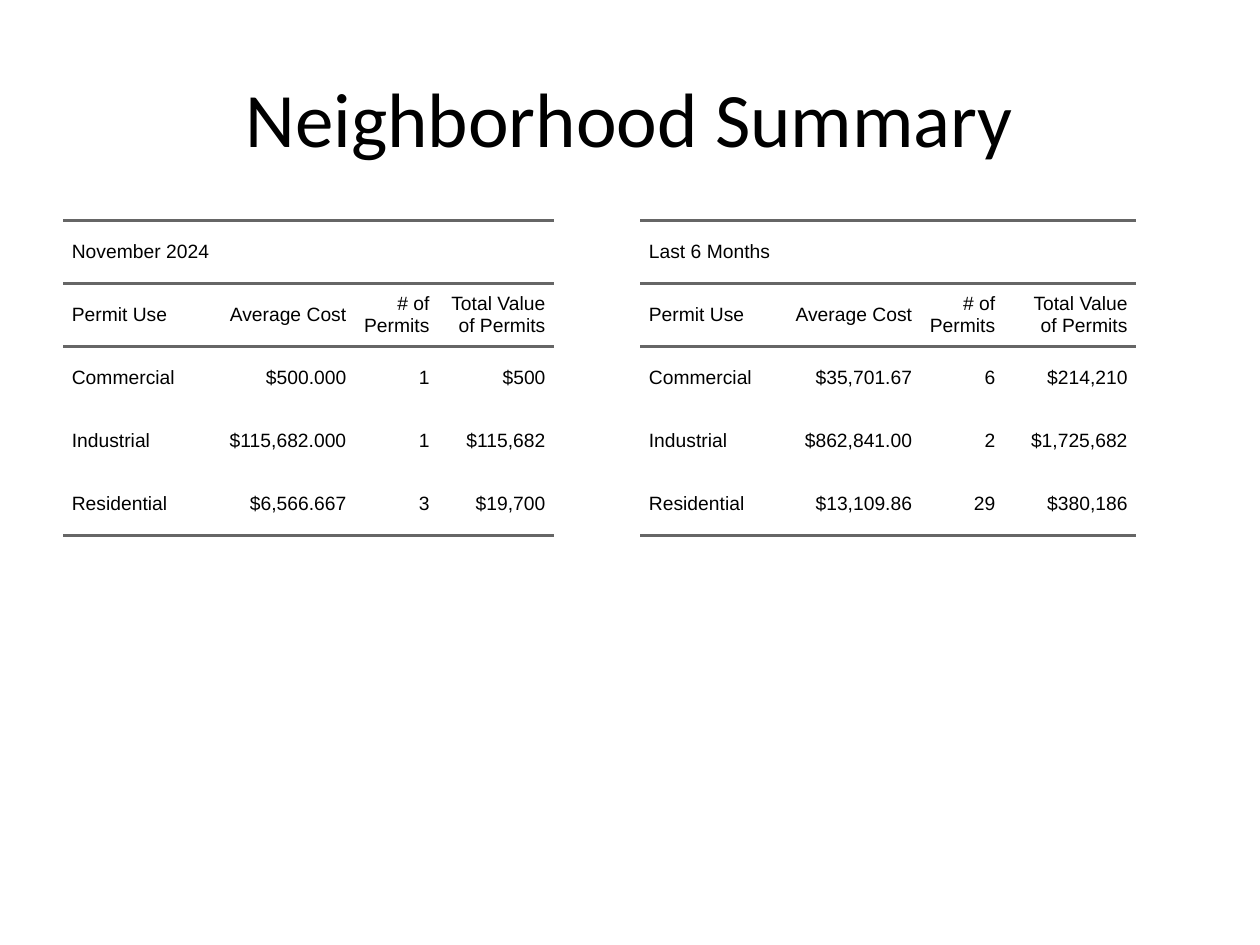
from lxml import etree
from pptx import Presentation
from pptx.dml.color import RGBColor
from pptx.enum import text
from pptx.oxml.ns import qn
from pptx.util import Inches, Pt

COLORS = {"ink": "000000", "rule": "666666"}
HEADER = ["Permit Use", "Average Cost", "# of Permits", "Total Value of Permits"]
RULED_EDGES = {0, 1, 2, 5}  # edge n lies above row n
PAD = Inches(0.07)
ROW_HEIGHT = Inches(0.5)

NOVEMBER = [
    ["Commercial", "$500.000", "1", "$500"],
    ["Industrial", "$115,682.000", "1", "$115,682"],
    ["Residential", "$6,566.667", "3", "$19,700"],
]
SIX_MONTHS = [
    ["Commercial", "$35,701.67", "6", "$214,210"],
    ["Industrial", "$862,841.00", "2", "$1,725,682"],
    ["Residential", "$13,109.86", "29", "$380,186"],
]


class SlideBuilder:
    def __init__(self, slide):
        self.slide = slide

    def style(self, p, font, size, align):
        p.alignment = align
        p.font.name = font
        p.font.size = Pt(size)
        p.font.color.rgb = RGBColor.from_string(COLORS["ink"])

    def title(self, words):
        sp = self.slide.shapes.add_textbox(Inches(0.5), Inches(0.3), Inches(9), Inches(1.25))
        tf = sp.text_frame
        tf.word_wrap = True
        tf.vertical_anchor = text.MSO_ANCHOR.MIDDLE
        tf.text = words
        self.style(tf.paragraphs[0], "Calibri", 44, text.PP_ALIGN.CENTER)

    def borders(self, cell, row):
        """Rule the cell's top and bottom where the row meets a ruled edge."""
        tcPr = cell._tc.get_or_add_tcPr()
        ruled = {"L": False, "R": False, "T": row in RULED_EDGES, "B": row + 1 in RULED_EDGES}
        for side, visible in ruled.items():
            ln = etree.SubElement(tcPr, qn(f"a:ln{side}"), w=str(Pt(1.5)))
            if visible:
                fill = etree.SubElement(ln, qn("a:solidFill"))
                etree.SubElement(fill, qn("a:srgbClr"), val=COLORS["rule"])
            else:
                etree.SubElement(ln, qn("a:noFill"))

    def cell(self, cell, words, row, align):
        self.borders(cell, row)
        cell.fill.background()
        cell.vertical_anchor = text.MSO_ANCHOR.MIDDLE
        cell.margin_left = cell.margin_right = 0
        cell.margin_top = cell.margin_bottom = PAD
        cell.text = words
        p = cell.text_frame.paragraphs[0]
        self.style(p, "Arial", 11, align)
        p.space_before = p.space_after = Pt(5)
        pPr = p._p.get_or_add_pPr()
        pPr.set("marL", str(PAD))
        pPr.set("marR", str(PAD))
        pPr.set("indent", "0")

    def permit_table(self, left, widths, period, permits):
        rows = [[period, "", "", ""], HEADER, *permits]
        width, height = Inches(4.42), Inches(4.95)
        frame = self.slide.shapes.add_table(
            len(rows), len(HEADER), Inches(left), Inches(1.75), width, height)
        table = frame.table
        table.first_row = table.horz_banding = False
        for column, inches in zip(table.columns, widths):
            column.width = Inches(inches)
        for r, values in enumerate(rows):
            table.rows[r].height = ROW_HEIGHT
            for c, words in enumerate(values):
                align = text.PP_ALIGN.RIGHT if c else text.PP_ALIGN.LEFT
                self.cell(table.cell(r, c), words, r, align)
        table.cell(0, 0).merge(table.cell(0, len(HEADER) - 1))
        frame.width, frame.height = width, height


def main():
    prs = Presentation()
    prs.slide_width, prs.slide_height = Inches(10), Inches(7.5)
    s = SlideBuilder(prs.slides.add_slide(prs.slide_layouts[6]))
    s.permit_table(0.5, [1.1, 1.22, 0.66, 0.92], "November 2024", NOVEMBER)
    s.permit_table(5.08, [1.1, 1.13, 0.66, 1.05], "Last 6 Months", SIX_MONTHS)
    s.title("Neighborhood Summary")
    prs.save("out.pptx")


if __name__ == "__main__":
    main()
